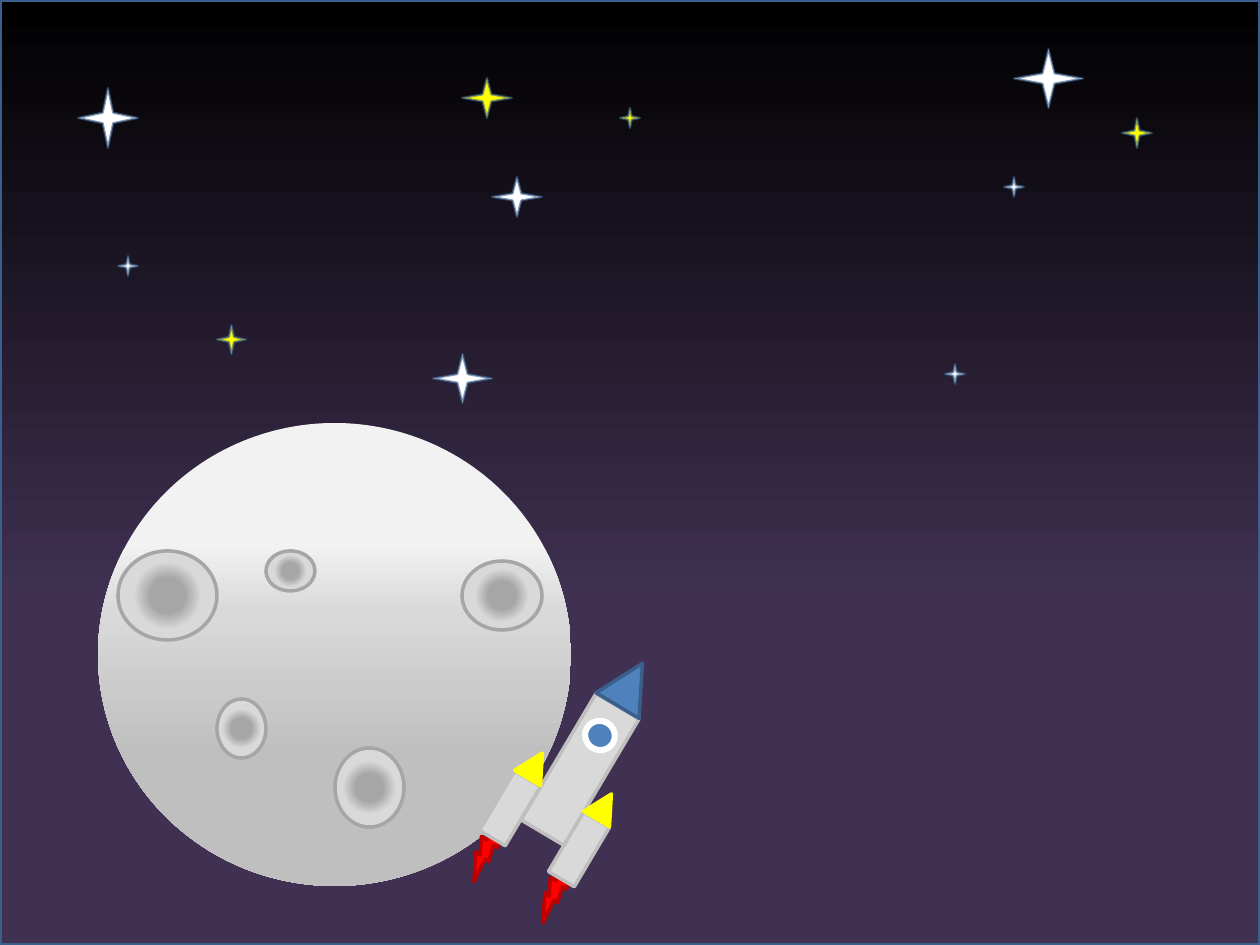
from lxml import etree
from pptx import Presentation
from pptx import util as u
from pptx.dml.color import RGBColor
from pptx.enum import shapes
from pptx.oxml import ns

PX = 914400 / 126
WIDTH, HEIGHT = 1260, 945
TILT = 30.7
BOOSTER_OFFSETS = [(0, 0), (69, 41)]
KIND = shapes.MSO_SHAPE
COLORS = {
    "night": "403152", "black": "000000", "white": "FFFFFF",
    "yellow": "FFFF00", "blue": "4F81BD", "outline": "3A5F8C",
    "red": "FF0000", "dark red": "C00000",
    "pale": "F2F2F2", "light": "D9D9D9", "silver": "BFBFBF", "gray": "A6A6A6",
}
SKY = [(0, "night"), (36, "night"), (100, "black")]
MOON = [(26, "pale"), (41, "light"), (72, "silver")]
CRATER = [(26, "gray"), (51, "light"), (100, "light")]

STARS = [
    (78, 88, 60, 60, "white"), (433, 354, 59, 49, "white"),
    (217, 325, 29, 29, "yellow"), (118, 256, 20, 20, "white"),
    (492, 177, 50, 40, "white"), (1014, 49, 69, 59, "white"),
    (1004, 177, 20, 20, "white"), (945, 364, 20, 20, "white"),
    (462, 78, 50, 40, "yellow"), (620, 108, 20, 20, "yellow"),
    (1122, 118, 30, 30, "yellow"),
]
CRATERS = [
    (118, 551, 99, 89), (266, 551, 49, 40), (462, 561, 80, 69),
    (217, 699, 49, 59), (335, 748, 69, 79),
]


def emu(pixels):
    return u.Emu(round(pixels * PX))


def rgb(name):
    return RGBColor.from_string(COLORS[name])


def add_node(parent, tag, **attributes):
    node = etree.SubElement(parent, ns.qn(tag))
    for name, value in attributes.items():
        node.set(name, str(value))
    return node


class Scene:
    """Draws on one slide; shapes go into the current group, if any."""

    def __init__(self, slide):
        self.slide = slide
        self.target = slide.shapes

    def start_group(self):
        self.target = self.slide.shapes.add_group_shape().shapes

    def end_group(self):
        self.target = self.slide.shapes

    def shape(self, kind, box, fill, line=None, weight=2, rotation=0):
        shape = self.target.add_shape(kind, *map(emu, box))
        shape.shadow.inherit = False
        shape.rotation = rotation
        if isinstance(fill, str):
            shape.fill.solid()
            shape.fill.fore_color.rgb = rgb(fill)
        if line:
            shape.line.color.rgb = rgb(line)
            shape.line.width = u.Pt(weight)
        else:
            shape.line.fill.background()
        return shape

    def gradient_shape(self, kind, box, stops, angle=None, line=None):
        """Fill along an angle in degrees, or from the centre outwards without one."""
        shape = self.shape(kind, box, None, line)
        shape.fill.gradient()
        gradient = shape.element.spPr.find(ns.qn("a:gradFill"))
        for child in list(gradient):
            gradient.remove(child)
        stop_list = add_node(gradient, "a:gsLst")
        for position, color in stops:
            stop = add_node(stop_list, "a:gs", pos=position * 1000)
            add_node(stop, "a:srgbClr", val=COLORS[color])
        if angle is None:
            circle = add_node(gradient, "a:path", path="circle")
            add_node(circle, "a:fillToRect", l=50000, t=50000, r=50000, b=50000)
        else:
            add_node(gradient, "a:lin", ang=angle * 60000, scaled=0)

    def star(self, left, top, width, height, color):
        star = self.shape(KIND.STAR_4_POINT, (left, top, width, height),
                          color, "outline", 1.25)
        star.adjustments[0] = 0.125
        line_color = star.element.spPr.find(".//" + ns.qn("a:ln")).find(
            ".//" + ns.qn("a:srgbClr"))
        add_node(line_color, "a:alpha", val=62000)

    def booster_parts(self, kind, box, fill, line, rotation=TILT):
        """Draw the same part on each of the two boosters."""
        left, top, width, height = box
        for right, down in BOOSTER_OFFSETS:
            self.shape(kind, (left + right, top + down, width, height),
                       fill, line, rotation=rotation)

    def rocket(self):
        self.start_group()
        self.booster_parts(KIND.LIGHTNING_BOLT, (461, 824, 48, 50),
                           "red", "dark red", rotation=62.5)
        self.shape(KIND.RECTANGLE, (555, 696, 50, 147), "light", "silver", rotation=TILT)
        self.booster_parts(KIND.RECTANGLE, (495, 774, 30, 69), "light", "silver")
        self.booster_parts(KIND.ISOSCELES_TRIANGLE, (520, 751, 30, 29), "yellow", "yellow")
        self.shape(KIND.OVAL, (585, 721, 30, 29), "blue", "white", 3.5, TILT)
        self.shape(KIND.ISOSCELES_TRIANGLE, (605, 660, 50, 49),
                   "blue", "outline", rotation=TILT)
        self.end_group()


def main():
    presentation = Presentation()
    presentation.slide_width, presentation.slide_height = emu(WIDTH), emu(HEIGHT)
    scene = Scene(presentation.slides.add_slide(presentation.slide_layouts[6]))

    scene.gradient_shape(KIND.RECTANGLE, (0, 0, WIDTH, HEIGHT), SKY, 270, "outline")
    scene.start_group()
    for star in STARS:
        scene.star(*star)
    scene.end_group()
    scene.gradient_shape(KIND.OVAL, (98, 423, 473, 463), MOON, 90)
    for crater in CRATERS:
        scene.gradient_shape(KIND.OVAL, crater, CRATER, line="gray")
    scene.rocket()

    presentation.save("out.pptx")


if __name__ == "__main__":
    main()
